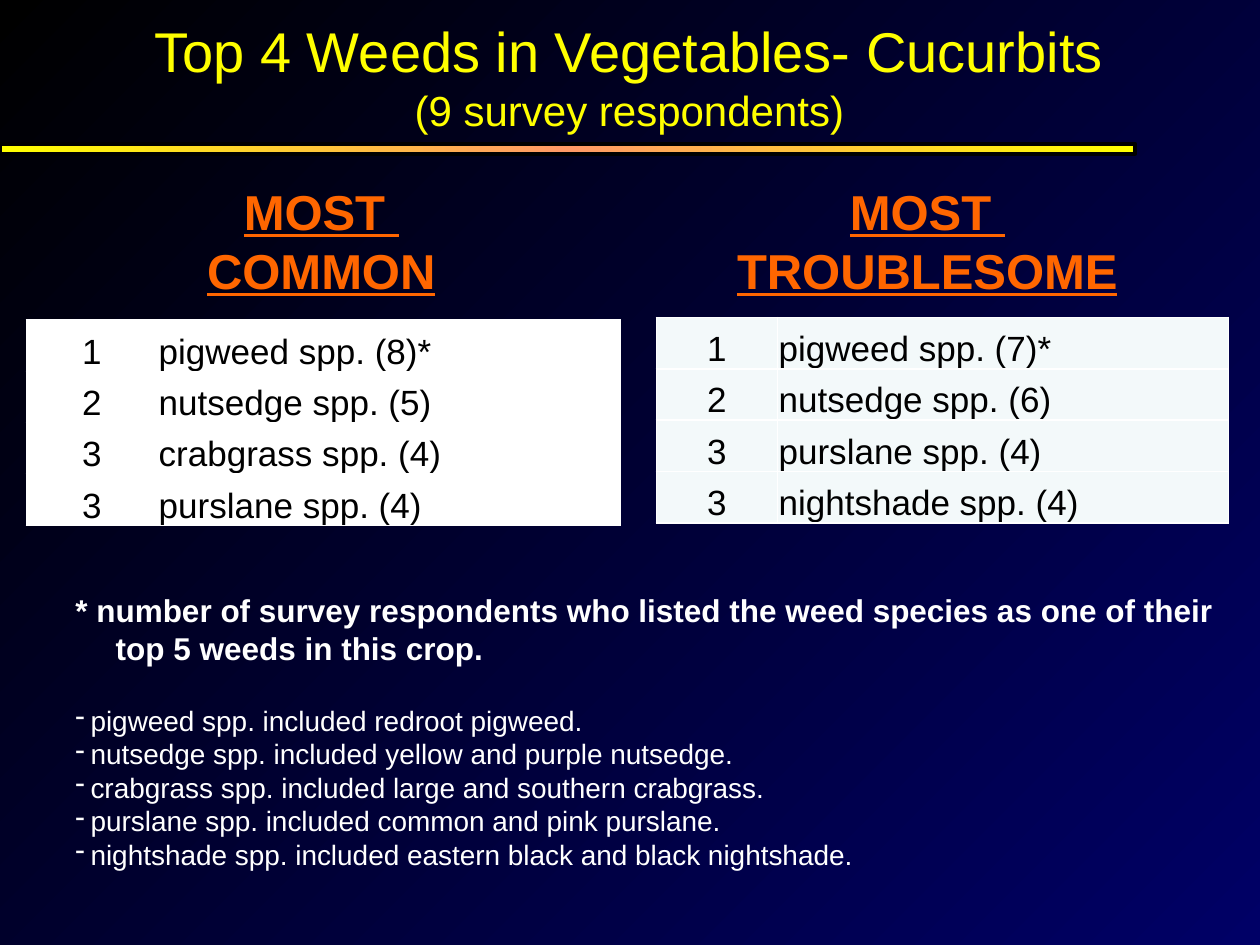
import copy
from lxml import etree
from pptx import Presentation
from pptx import util as u
from pptx.dml.color import RGBColor
from pptx.enum import shapes, text
from pptx.oxml import parse_xml
from pptx.oxml.ns import nsdecls, qn

BLACK = RGBColor(0x00, 0x00, 0x00)
NAVY = RGBColor(0x00, 0x00, 0x66)
WHITE = RGBColor(0xFF, 0xFF, 0xFF)
PALE = RGBColor(0xF3, 0xF9, 0xFA)
YELLOW = RGBColor(0xFF, 0xFF, 0x00)
PEACH = RGBColor(0xFF, 0x99, 0x66)
ORANGE = RGBColor(0xFF, 0x66, 0x00)


def style(p, size, color, bold=False, align=None):
    p.font.name = "Arial"
    p.font.size = u.Pt(size)
    p.font.color.rgb = color
    p.font.bold = bold
    p.alignment = align


def add_box(s, left, top, width, height, lines):
    tf = s.shapes.add_textbox(*map(u.Inches, (left, top, width, height))).text_frame
    tf.word_wrap = True
    tf.text = "\n".join(lines)
    return tf


prs = Presentation()
prs.slide_width = u.Inches(10)
prs.slide_height = u.Inches(7.5)
s = prs.slides.add_slide(prs.slide_layouts[6])

fill = s.background.fill
fill.gradient()
fill.gradient_angle = 315
for stop, color, pos in zip(fill.gradient_stops, (BLACK, NAVY), (0, 1)):
    stop.color.rgb = color
    stop.position = pos

sp = s.shapes.add_shape(shapes.MSO_SHAPE.RECTANGLE, u.Inches(0), u.Inches(1.14),
                        u.Inches(9.01), u.Inches(0.08))
sp.shadow.inherit = False
sp.line.color.rgb = BLACK
sp.line.width = u.Pt(2.25)
sp.fill.gradient()
sp.fill.gradient_angle = 0
gs_list = sp.fill._fill._gradFill.find(qn("a:gsLst"))
gs_list.append(copy.deepcopy(gs_list[0]))
for stop, color, pos in zip(sp.fill.gradient_stops, (YELLOW, PEACH, YELLOW), (0, 0.5, 1)):
    stop.color.rgb = color
    stop.position = pos

for left, width, word in ((1.35, 2.4, "COMMON"), (5.73, 3.26, "TROUBLESOME")):
    tf = add_box(s, left, 1.39, width, 1.04, ["MOST ", word])
    for p in tf.paragraphs:
        style(p, 28, ORANGE, True, text.PP_ALIGN.CENTER)
        p.font.underline = True

common = [("1", "pigweed spp. (8)*"), ("2", "nutsedge spp. (5)"),
          ("3", "crabgrass spp. (4)"), ("3", "purslane spp. (4)")]
troublesome = [("1", "pigweed spp. (7)*"), ("2", "nutsedge spp. (6)"),
               ("3", "purslane spp. (4)"), ("3", "nightshade spp. (4)")]
for left, top, widths, color, rows in (
    (0.21, 2.54, (1.04, 3.67), WHITE, common),
    (5.21, 2.52, (0.96, 3.58), PALE, troublesome),
):
    table = s.shapes.add_table(len(rows), 2, u.Inches(left), u.Inches(top),
                               u.Inches(sum(widths)), u.Inches(1.63)).table
    table.first_row = table.horz_banding = False
    for column, width in zip(table.columns, widths):
        column.width = u.Inches(width)
    for i, row in enumerate(rows):
        for j, value in enumerate(row):
            cell = table.cell(i, j)
            cell.text = value
            cell.vertical_anchor = text.MSO_ANCHOR.BOTTOM
            cell.margin_left = cell.margin_right = cell.margin_top = u.Inches(0.01)
            cell.margin_bottom = 0
            cell.fill.solid()
            cell.fill.fore_color.rgb = color
            style(cell.text_frame.paragraphs[0], 20, BLACK,
                  align=text.PP_ALIGN.LEFT if j else text.PP_ALIGN.CENTER)
            for k, side in enumerate("LRTB"):
                cell._tc.tcPr.insert(k, parse_xml(
                    f'<a:ln{side} w="12700" {nsdecls("a")}><a:solidFill>'
                    f'<a:srgbClr val="{WHITE}"/></a:solidFill></a:ln{side}>'))

tf = add_box(s, 0.33, 0, 9.33, 1.2,
             ["Top 4 Weeds in Vegetables- Cucurbits", "(9 survey respondents)"])
tf.vertical_anchor = text.MSO_ANCHOR.MIDDLE
for p, size in zip(tf.paragraphs, (32, 24)):
    style(p, size, YELLOW, align=text.PP_ALIGN.CENTER)

tf = add_box(s, 0.5, 4.64, 9.25, 2.36, [
    "* number of survey respondents who listed the weed species as one of their "
    "top 5 weeds in this crop.",
    "pigweed spp. included redroot pigweed.",
    "nutsedge spp. included yellow and purple nutsedge.",
    "crabgrass spp. included large and southern crabgrass.",
    "purslane spp. included common and pink purslane.",
    "nightshade spp. included eastern black and black nightshade.",
])
for i, p in enumerate(tf.paragraphs):
    style(p, 16 if i else 18, WHITE, bold=i == 0)
    indent = u.Inches(0.12 if i else 0.32)
    pPr = p._p.get_or_add_pPr()
    pPr.set("marL", str(indent))
    pPr.set("indent", str(-indent))
    if i == 1:
        p.space_before = u.Pt(21)
    if i:
        bullet = etree.Element(qn("a:buChar"), char="-")
        pPr.find(qn("a:defRPr")).addprevious(bullet)

prs.save("out.pptx")
